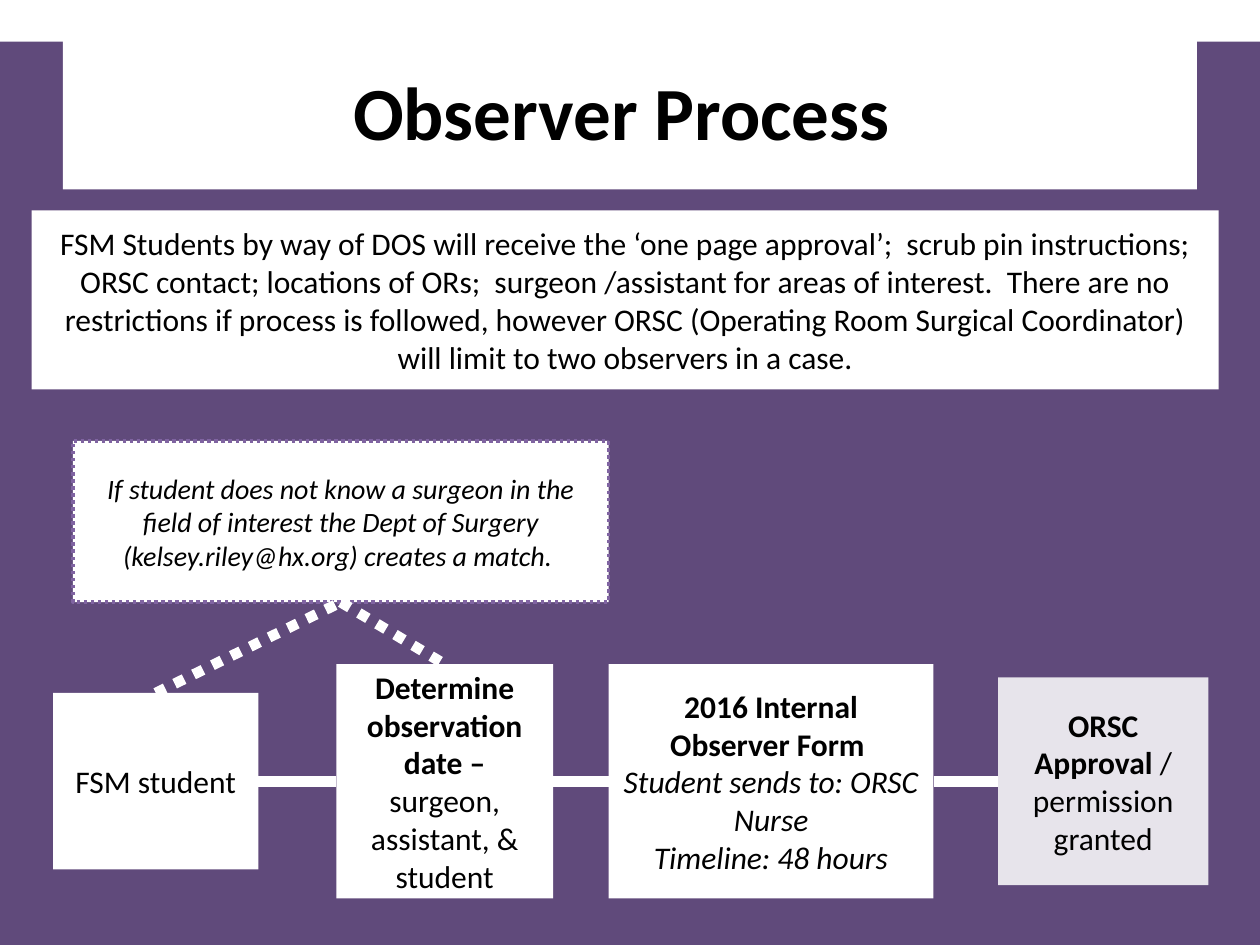
"""Build the Observer Process slide with its linked flow of steps."""
from lxml.etree import SubElement
from pptx import Presentation
from pptx.dml.color import RGBColor
from pptx.enum.dml import MSO_LINE_DASH_STYLE as Dash
from pptx.enum.shapes import MSO_CONNECTOR as Connector, MSO_SHAPE as Shape
from pptx.enum.text import MSO_ANCHOR as Anchor, PP_ALIGN as Align
from pptx.oxml.ns import qn
from pptx.util import Cm, Pt

WHITE = RGBColor(0xFF, 0xFF, 0xFF)
BLACK = RGBColor(0, 0, 0)
PURPLE = RGBColor(0x60, 0x4A, 0x7B)
LILAC = RGBColor(0x80, 0x64, 0xA2)

PLAIN = {"size": Pt(18), "name": "Calibri"}
BOLD = PLAIN | {"bold": True}
ITALIC = PLAIN | {"italic": True}
NOTE = ITALIC | {"size": Pt(16)}
TITLE = BOLD | {"size": Pt(42.9)}

PANELS = {
    "backdrop": ((0, 0.84, 25.4, 18.21), PURPLE, []),
    "title": ((1.27, 0.64, 22.86, 3.18), WHITE, [[("Observer Process ", TITLE)]]),
    "intro": ((0.64, 4.24, 23.93, 3.61), WHITE, [[(
        "FSM Students by way of DOS will receive the ‘one page approval’;  scrub pin "
        "instructions; ORSC contact; locations of ORs;  surgeon /assistant for areas of "
        "interest.  There are no restrictions if process is followed, however ORSC "
        "(Operating Room Surgical Coordinator) will limit to two observers in a case.",
        PLAIN)]]),
    "match": ((1.47, 8.89, 10.8, 3.25), WHITE, [[(
        "If student does not know a surgeon in the field of interest the Dept of Surgery "
        "(kelsey.riley@hx.org) creates a match. ", NOTE)]]),
}
STEP_MIDDLE = 15.75
STEPS = {
    "student": ((1.07, 4.14, 3.56), [[("FSM student", PLAIN)]]),
    "date": ((6.78, 4.37, 4.72), [[
        ("Determine observation date – ", BOLD),
        ("surgeon, assistant, & student", PLAIN)]]),
    "form": ((12.27, 6.55, 4.72), [
        [("2016 Internal Observer Form ", BOLD)],
        [("Student sends to: ORSC  Nurse ", ITALIC)],
        [("Timeline: 48 hours", ITALIC)]]),
    "approval": ((20.12, 4.24, 4.19), [[
        ("ORSC Approval ", BOLD), ("/ permission granted", PLAIN)]]),
}
TOP, LEFT, BOTTOM, RIGHT = range(4)
DOTTED_LINKS = [("student", TOP, "match", BOTTOM), ("match", BOTTOM, "date", TOP)]


def add_box(slide, place, fill, paragraphs):
    shape = slide.shapes.add_shape(Shape.RECTANGLE, *map(Cm, place))
    shape.shadow.inherit = False
    shape.fill.solid()
    shape.fill.fore_color.rgb = fill
    shape.line.fill.background()
    frame = shape.text_frame
    frame.word_wrap = True
    frame.vertical_anchor = Anchor.MIDDLE
    for index, runs in enumerate(paragraphs):
        paragraph = frame.add_paragraph() if index else frame.paragraphs[0]
        paragraph.alignment = Align.CENTER
        for text, font_format in runs:
            run = paragraph.add_run()
            run.text = text
            run.font.color.rgb = BLACK
            for name, value in font_format.items():
                setattr(run.font, name, value)
    return shape


def style_line(line, color, width, dash=None):
    line.color.rgb = color
    for name, value in {"width": Pt(width), "dash_style": dash}.items():
        setattr(line, name, value)


def add_link(slide, start, start_site, end, end_site, dash=None):
    connector = slide.shapes.add_connector(Connector.STRAIGHT, 0, 0, 0, 0)
    connector.begin_connect(start, start_site)
    connector.end_connect(end, end_site)
    style_line(connector.line, WHITE, 6, dash)
    SubElement(connector._element.spPr, qn("a:effectLst"))


def main():
    presentation = Presentation()
    presentation.slide_width, presentation.slide_height = Cm(25.4), Cm(19.05)
    slide = presentation.slides.add_slide(presentation.slide_layouts[6])

    boxes = {name: add_box(slide, *panel) for name, panel in PANELS.items()}
    style_line(boxes["match"].line, LILAC, 2, Dash.ROUND_DOT)
    for name, ((left, width, height), paragraphs) in STEPS.items():
        place = (left, STEP_MIDDLE - height / 2, width, height)
        boxes[name] = add_box(slide, place, WHITE, paragraphs)
    approval_color = boxes["approval"].fill._xPr.find(".//" + qn("a:srgbClr"))
    SubElement(approval_color, qn("a:alpha"), val="85000")

    names = list(STEPS)
    for start, end in zip(names, names[1:]):
        add_link(slide, boxes[start], RIGHT, boxes[end], LEFT)
    for start, start_site, end, end_site in DOTTED_LINKS:
        add_link(slide, boxes[start], start_site, boxes[end], end_site, Dash.ROUND_DOT)
    presentation.save("out.pptx")


if __name__ == "__main__":
    main()
